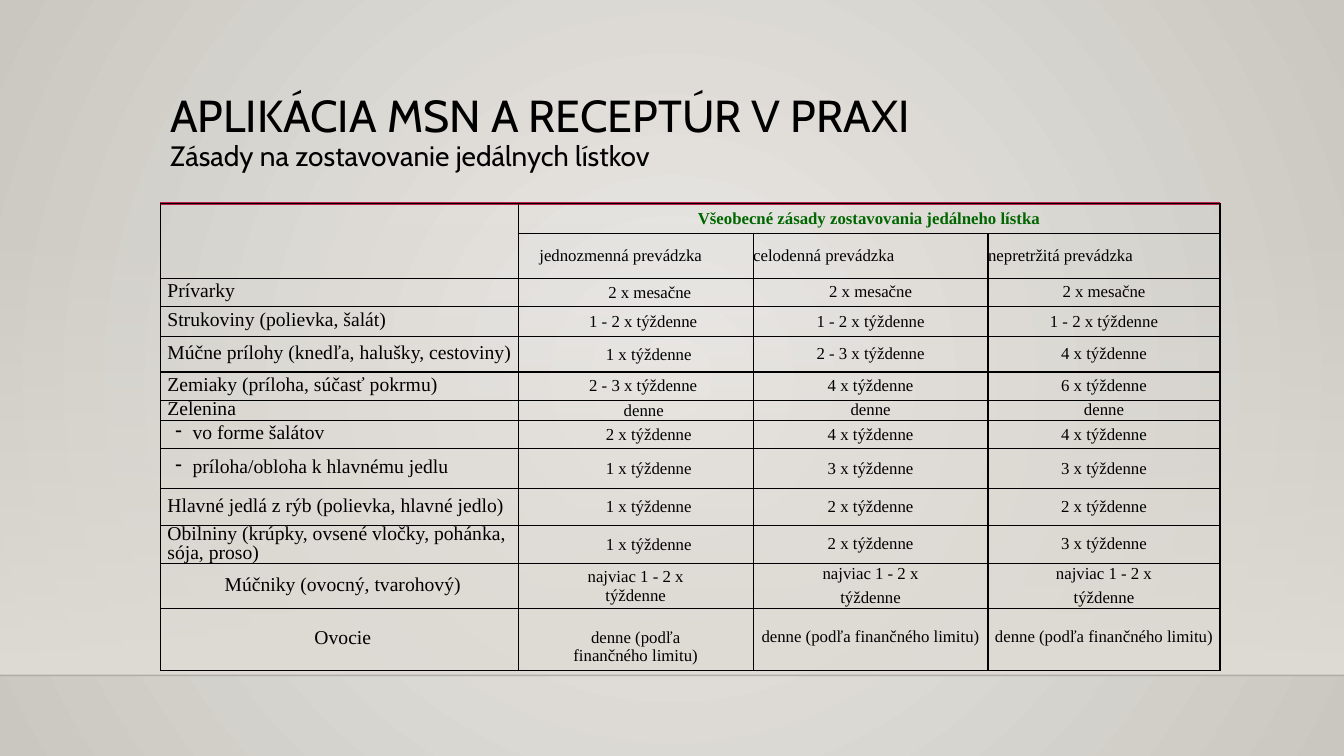
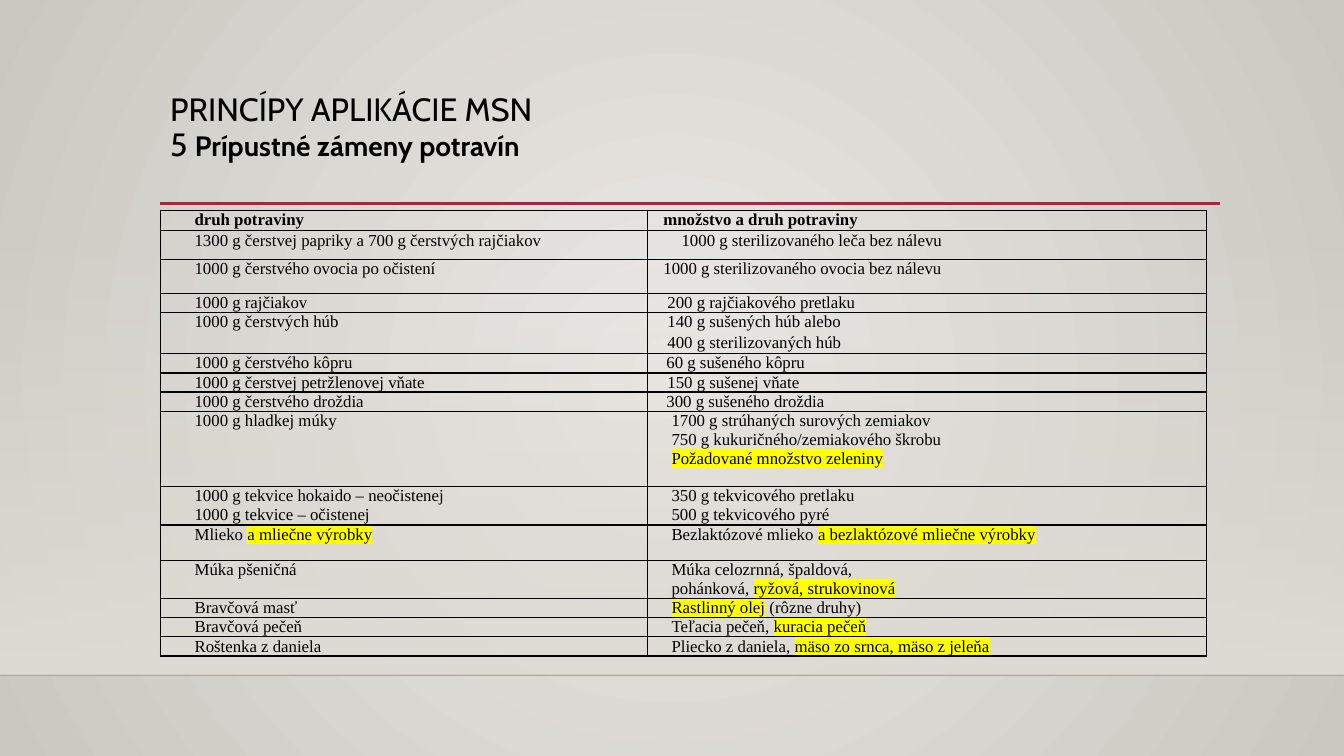
from lxml.etree import SubElement
from pptx import Presentation
from pptx.dml.color import RGBColor
from pptx.enum.shapes import MSO_CONNECTOR, MSO_SHAPE
from pptx.enum.text import MSO_ANCHOR, PP_ALIGN
from pptx.oxml.ns import qn
from pptx.util import Inches, Pt

COLORS = {
    "ink": "000000", "rule": "B71E42", "floor": "000001", "band": "DFDBD5",
    "light": "ECEAE7", "dark": "CAC7C1", "green": "006600", "mark": "FFFF00",
}
HEAD, BODY = "Cabin", "Times New Roman"
WIDTH, LEFT, RIGHT = 13.33, 1.59, 12.1
CENTER, MIDDLE, TOP = PP_ALIGN.CENTER, MSO_ANCHOR.MIDDLE, MSO_ANCHOR.TOP

# Slide 1: row height, indent of the first value, label, values
MENU_HEAD = ["jednozmenná prevádzka", "celodenná prevádzka", "nepretržitá prevádzka"]
MENU = [
    (.28, .28, "Prívarky", "2 x mesačne", "2 x mesačne", "2 x mesačne"),
    (.3, .15, "Strukoviny (polievka, šalát)",
     "1 - 2 x týždenne", "1 - 2 x týždenne", "1 - 2 x týždenne"),
    (.35, .26, "Múčne prílohy (knedľa, halušky, cestoviny)",
     "1 x týždenne", "2 - 3 x týždenne", "4 x týždenne"),
    (.28, .15, "Zemiaky (príloha, súčasť pokrmu)",
     "2 - 3 x týždenne", "4 x týždenne", "6 x týždenne"),
    (.19, .16, "Zelenina", "denne", "denne", "denne"),
    (.28, .26, "- vo forme šalátov", "2 x týždenne", "4 x týždenne", "4 x týždenne"),
    (.4, .26, "- príloha/obloha k hlavnému jedlu",
     "1 x týždenne", "3 x týždenne", "3 x týždenne"),
    (.36, .26, "Hlavné jedlá z rýb (polievka, hlavné jedlo)",
     "1 x týždenne", "2 x týždenne", "2 x týždenne"),
    (.38, .26, "Obilniny (krúpky, ovsené vločky, pohánka, sója, proso)",
     "1 x týždenne", "2 x týždenne", "3 x týždenne"),
    (.43, 0, "Múčniky (ovocný, tvarohový)", "najviac 1 - 2 x\ntýždenne",
     "najviac 1 - 2 x\ntýždenne", "najviac 1 - 2 x\ntýždenne"),
    (.61, 0, "Ovocie", "denne (podľa\nfinančného limitu)",
     "denne (podľa finančného limitu)", "denne (podľa finančného limitu)"),
]

# Slide 2: row height, indent of the second column, food, swap; *...* is marked
SWAPS = [
    (.28, .34, "1300 g čerstvej papriky a 700 g čerstvých rajčiakov",
     "1000 g sterilizovaného leča bez nálevu"),
    (.34, .16, "1000 g čerstvého ovocia po očistení",
     "1000 g sterilizovaného ovocia bez nálevu"),
    (.19, .2, "1000 g rajčiakov", "200 g rajčiakového pretlaku"),
    (.41, .2, "1000 g čerstvých húb",
     "140 g sušených húb alebo\n400 g sterilizovaných húb"),
    (.19, .19, "1000 g čerstvého kôpru", "60 g sušeného kôpru"),
    (.19, .2, "1000 g čerstvej petržlenovej vňate", "150 g sušenej vňate"),
    (.19, .19, "1000 g čerstvého droždia", "300 g sušeného droždia"),
    (.75, .24, "1000 g hladkej múky",
     "1700 g strúhaných surových zemiakov\n750 g kukuričného/zemiakového škrobu\n"
     "*Požadované množstvo zeleniny*"),
    (.38, .24, "1000 g tekvice hokaido – neočistenej\n1000 g tekvice – očistenej",
     "350 g tekvicového pretlaku\n500 g tekvicového pyré"),
    (.35, .24, "Mlieko *a mliečne výrobky*",
     "Bezlaktózové mlieko *a bezlaktózové mliečne výrobky*"),
    (.38, .24, "Múka pšeničná",
     "Múka celozrnná, špaldová,\npohánková, *ryžová, strukovinová*"),
    (.19, .24, "Bravčová masť", "*Rastlinný olej* (rôzne druhy)"),
    (.19, .24, "Bravčová pečeň", "Teľacia pečeň, *kuracia pečeň*"),
    (.19, .24, "Roštenka z daniela", "Pliecko z daniela, *mäso zo srnca, mäso z jeleňa*"),
]


def rgb(name):
    return RGBColor.from_string(COLORS[name])


def style(run, size, font, color, bold=False, mark=None):
    run.font.size, run.font.bold = Pt(size), bold
    run.font.color.rgb = rgb(color)
    if mark:
        light = SubElement(run.font._element, qn("a:highlight"))
        SubElement(light, qn("a:srgbClr"), val=COLORS[mark])
    run.font.name = font


def put(frame, text, align=None, left=0, lead=None, gap=0, alt=None, **look):
    """Write one paragraph per line; parts between stars take the alt look."""
    look = {"size": 12, "font": BODY, "color": "ink", **look}
    for i, line in enumerate(text.split("\n")):
        para = frame.add_paragraph() if i else frame.paragraphs[0]
        props = para._p.get_or_add_pPr()
        hang = 0
        if line.startswith("- "):
            line, hang = line[2:], .17
            SubElement(props, qn("a:buChar"), char="-")
        props.set("marL", str(Inches(left + hang)))
        props.set("indent", str(Inches(-hang)))
        para.alignment = align
        if lead:
            para.line_spacing = lead
        if i and gap:
            para.space_before = Pt(gap)
        for j, part in enumerate(line.split("*")):
            if part:
                run = para.add_run()
                run.text = part
                style(run, **{**look, **((alt or {}) if j % 2 else {})})


def fade(fill, first, last):
    fill.gradient()
    for stop, name, place in zip(fill.gradient_stops, (first, last), (0, 1)):
        stop.color.rgb, stop.position = rgb(name), place


def alpha(shape, value):
    color = shape._element.spPr.find(".//" + qn("a:srgbClr"))
    SubElement(color, qn("a:alpha"), val=str(value * 1000))


def rule(slide, start, end, y, color, width):
    line = slide.shapes.add_connector(
        MSO_CONNECTOR.STRAIGHT, Inches(start), Inches(y), Inches(end), Inches(y))
    line.line.color.rgb, line.line.width = rgb(color), Pt(width)
    SubElement(line._element.spPr, qn("a:effectLst"))
    return line


def backdrop(deck):
    master = deck.slide_master
    fade(master.background.fill, "light", "dark")
    grad = master.element.find(".//" + qn("a:gradFill"))
    for old in grad.findall(qn("a:lin")):
        grad.remove(old)
    ring = SubElement(grad, qn("a:path"), path="circle")
    SubElement(ring, qn("a:fillToRect"), dict.fromkeys("ltrb", "50000"))


def page(deck, title, **look):
    slide = deck.slides.add_slide(deck.slide_layouts[6])
    # Band and rules
    band = slide.shapes.add_shape(
        MSO_SHAPE.RECTANGLE, 0, Inches(2.21), Inches(WIDTH), Inches(4.49))
    band.shadow.inherit = False
    band.line.fill.background()
    fade(band.fill, "band", "band")
    band.fill.gradient_angle = 270
    alpha(band, 0)
    alpha(rule(slide, 0, WIDTH, 6.7, "floor", 1), 20)
    rule(slide, LEFT, RIGHT, 2.02, "rule", 2.5)
    # Title
    box = slide.shapes.add_textbox(Inches(LEFT), Inches(.88), Inches(10.5), Inches(1.15))
    box.text_frame.word_wrap = True
    put(box.text_frame, title, font=HEAD, lead=.9, **look)
    return slide


def border(cell):
    props = cell._tc.get_or_add_tcPr()
    for side in ("lnL", "lnR", "lnT", "lnB"):
        line = SubElement(props, qn("a:" + side), w=str(Pt(1)))
        paint = SubElement(line, qn("a:solidFill"))
        SubElement(paint, qn("a:srgbClr"), val=COLORS["ink"])


def grid(slide, top, cols, rows, anchor):
    table = slide.shapes.add_table(
        len(rows), len(cols), Inches(LEFT), Inches(top),
        Inches(sum(cols)), Inches(sum(rows))).table
    table.first_row = table.horz_banding = False
    for col, width in zip(table.columns, cols):
        col.width = Inches(width)
    for row, height in zip(table.rows, rows):
        row.height = Inches(height)
    for cell in table.iter_cells():
        border(cell)
        cell.fill.background()
        cell.margin_left = cell.margin_right = cell.margin_top = cell.margin_bottom = 0
        cell.vertical_anchor = anchor
    return table


def menu(deck):
    slide = page(
        deck, "APLIKÁCIA MSN A RECEPTÚR V PRAXI\n*Zásady na zostavovanie jedálnych lístkov*",
        size=32, alt={"size": 20})
    table = grid(slide, 2.02, [3.55, 2.33, 2.33, 2.3],
                 [.3, .44] + [row[0] for row in MENU], MIDDLE)
    # Heading rows
    table.cell(0, 0).merge(table.cell(1, 0))
    table.cell(0, 1).merge(table.cell(0, 3))
    put(table.cell(0, 1).text_frame, "Všeobecné zásady zostavovania jedálneho lístka",
        align=CENTER, color="green", bold=True)
    for c, text in enumerate(MENU_HEAD, 1):
        put(table.cell(1, c).text_frame, text, left=.21 if c == 1 else 0)
    # Food rows
    for r, (_, left, label, *values) in enumerate(MENU, 2):
        put(table.cell(r, 0).text_frame, label, size=14, lead=Pt(13.5),
            left=.15 if label.startswith("- ") else .07,
            align=CENTER if label in ("Múčniky (ovocný, tvarohový)", "Ovocie") else None)
        for c, text in enumerate(values, 1):
            cell = table.cell(r, c)
            if label == "Ovocie":
                cell.vertical_anchor, cell.margin_top = TOP, Inches(.19)
            first = c == 1
            put(cell.text_frame, text, align=CENTER, left=left if first else 0,
                lead=Pt(13.5) if first else None, gap=0 if first else 3.5)


def swaps(deck):
    slide = page(deck, "PRINCÍPY APLIKÁCIE MSN\n5 *Prípustné zámeny potravín*",
                 size=23, alt={"size": 20, "bold": True})
    table = grid(slide, 2.09, [4.83, 5.55], [.19] + [row[0] for row in SWAPS], TOP)
    put(table.cell(0, 0).text_frame, "druh potraviny", left=.34, bold=True)
    put(table.cell(0, 1).text_frame, "množstvo a druh potraviny", left=.16, bold=True)
    for r, (_, left, food, swap) in enumerate(SWAPS, 1):
        for c, (text, dent) in enumerate([(food, .34), (swap, left)]):
            put(table.cell(r, c).text_frame, text, left=dent, lead=Pt(13.5),
                gap=1.6 if "húb" in text else 0, alt={"mark": "mark"})


def main():
    deck = Presentation()
    deck.slide_width, deck.slide_height = Inches(WIDTH), Inches(7.5)
    backdrop(deck)
    menu(deck)
    swaps(deck)
    deck.save("out.pptx")


if __name__ == "__main__":
    main()
